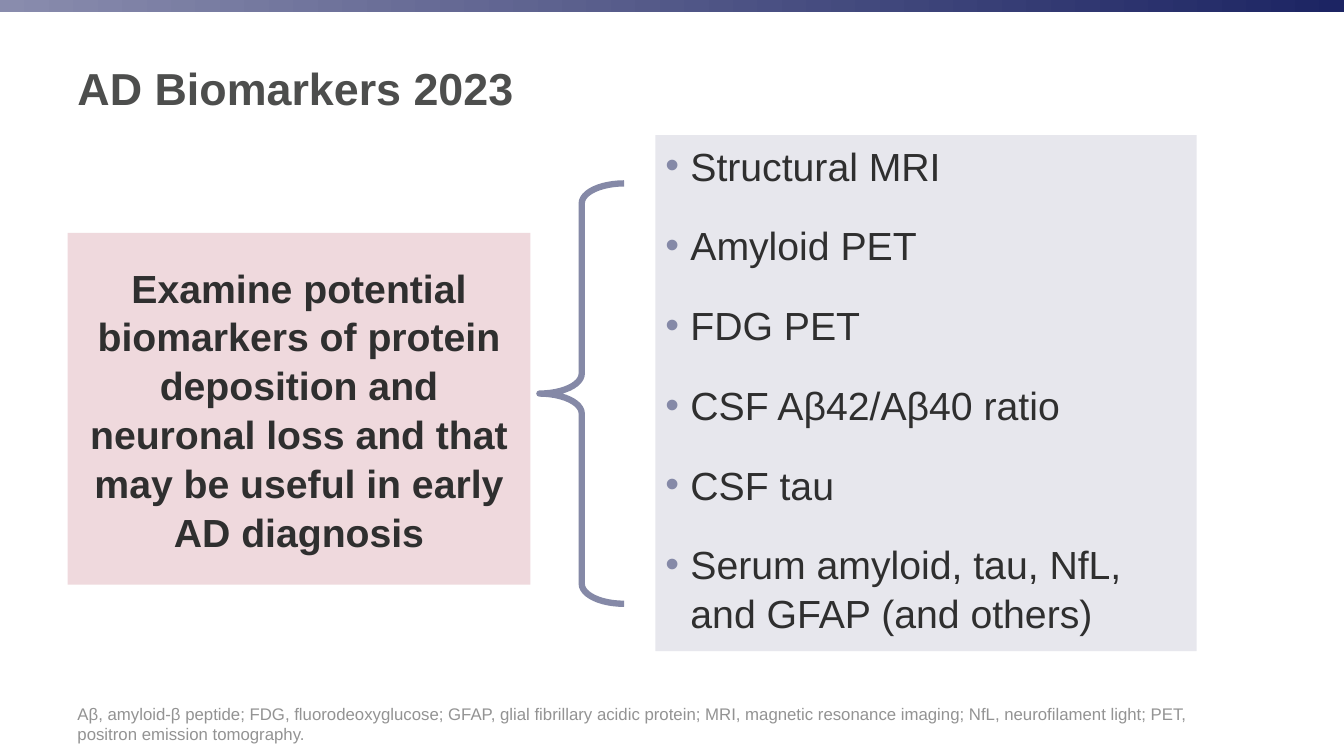
from lxml import etree
from pptx import Presentation
from pptx import util as u
from pptx.dml import color
from pptx.enum import shapes, text
from pptx.oxml import ns

PX = 9144


def rgb(value):
    return color.RGBColor.from_string(value)


def add_panel(box, lines, size, ink, anchor, fill=None, bold=False):
    panel = slide.shapes.add_textbox(*[n * PX for n in box])
    if fill:
        panel.fill.solid()
        panel.fill.fore_color.rgb = rgb(fill)
    frame = panel.text_frame
    frame.word_wrap = True
    frame.vertical_anchor = anchor
    frame.text = "\n".join(lines)
    for paragraph in frame.paragraphs:
        paragraph.font.name = "Arial"
        paragraph.font.size = u.Pt(size)
        paragraph.font.bold = bold
        paragraph.font.color.rgb = rgb(ink)
    return frame.paragraphs


prs = Presentation()
prs.slide_width = 1333 * PX
prs.slide_height = 750 * PX
slide = prs.slides.add_slide(prs.slide_layouts[6])

top_band = slide.shapes.add_shape(shapes.MSO_SHAPE.RECTANGLE, 0, 0, 1333 * PX, 12 * PX)
top_band.shadow.inherit = False
top_band.line.fill.background()
top_band.fill.gradient()
top_band.fill.gradient_angle = 0
for stop, shade, position in zip(top_band.fill.gradient_stops, ("898CAD", "1C2463"), (0, 1)):
    stop.color.rgb = rgb(shade)
    stop.position = position

add_panel((67, 22, 1175, 130), ["AD Biomarkers 2023"], 32, "4D4E4D",
          text.MSO_ANCHOR.MIDDLE, bold=True)

goal = add_panel(
    (67, 231, 459, 349),
    ["Examine potential biomarkers of protein deposition and neuronal loss "
     "and that may be useful in early AD diagnosis"],
    28, "2F2F2F", text.MSO_ANCHOR.MIDDLE, fill="EFD9DD", bold=True)
goal[0].alignment = text.PP_ALIGN.CENTER
goal[0].line_spacing = 1.04
goal[0].space_before = u.Pt(10)

biomarkers = add_panel(
    (650, 134, 537, 512),
    ["Structural MRI", "Amyloid PET", "FDG PET", "CSF Aβ42/Aβ40 ratio", "CSF tau",
     "Serum amyloid, tau, NfL, and GFAP (and others)"],
    28, "2F2F2F", text.MSO_ANCHOR.TOP, fill="E7E7ED")
for biomarker in biomarkers:
    biomarker.line_spacing = 1.04
    biomarker.space_before = u.Pt(10)
    biomarker.space_after = u.Pt(12)
    properties = biomarker._p.get_or_add_pPr()
    properties.set("marL", str(25 * PX))
    properties.set("indent", str(-25 * PX))
    bullet_color = etree.Element(ns.qn("a:buClr"))
    etree.SubElement(bullet_color, ns.qn("a:srgbClr"), val="8589A7")
    bullet_font = etree.Element(ns.qn("a:buFont"), typeface="Arial")
    bullet = etree.Element(ns.qn("a:buChar"), char="•")
    for offset, element in enumerate((bullet_color, bullet_font, bullet)):
        properties.insert(3 + offset, element)

add_panel(
    (67, 695, 1150, 48),
    ["Aβ, amyloid-β peptide; FDG, fluorodeoxyglucose; GFAP, glial fibrillary acidic protein; "
     "MRI, magnetic resonance imaging; NfL, neurofilament light; PET, positron emission tomography."],
    12, "939393", text.MSO_ANCHOR.BOTTOM)

brace = slide.shapes.add_shape(shapes.MSO_SHAPE.LEFT_BRACE, 535 * PX, 182 * PX, 84 * PX, 417 * PX)
brace.shadow.inherit = False
brace.adjustments[0] = 0.236
brace.adjustments[1] = 0.5
brace.fill.background()
brace.line.color.rgb = rgb("8589A7")
brace.line.width = u.Pt(4.5)

prs.save("out.pptx")
